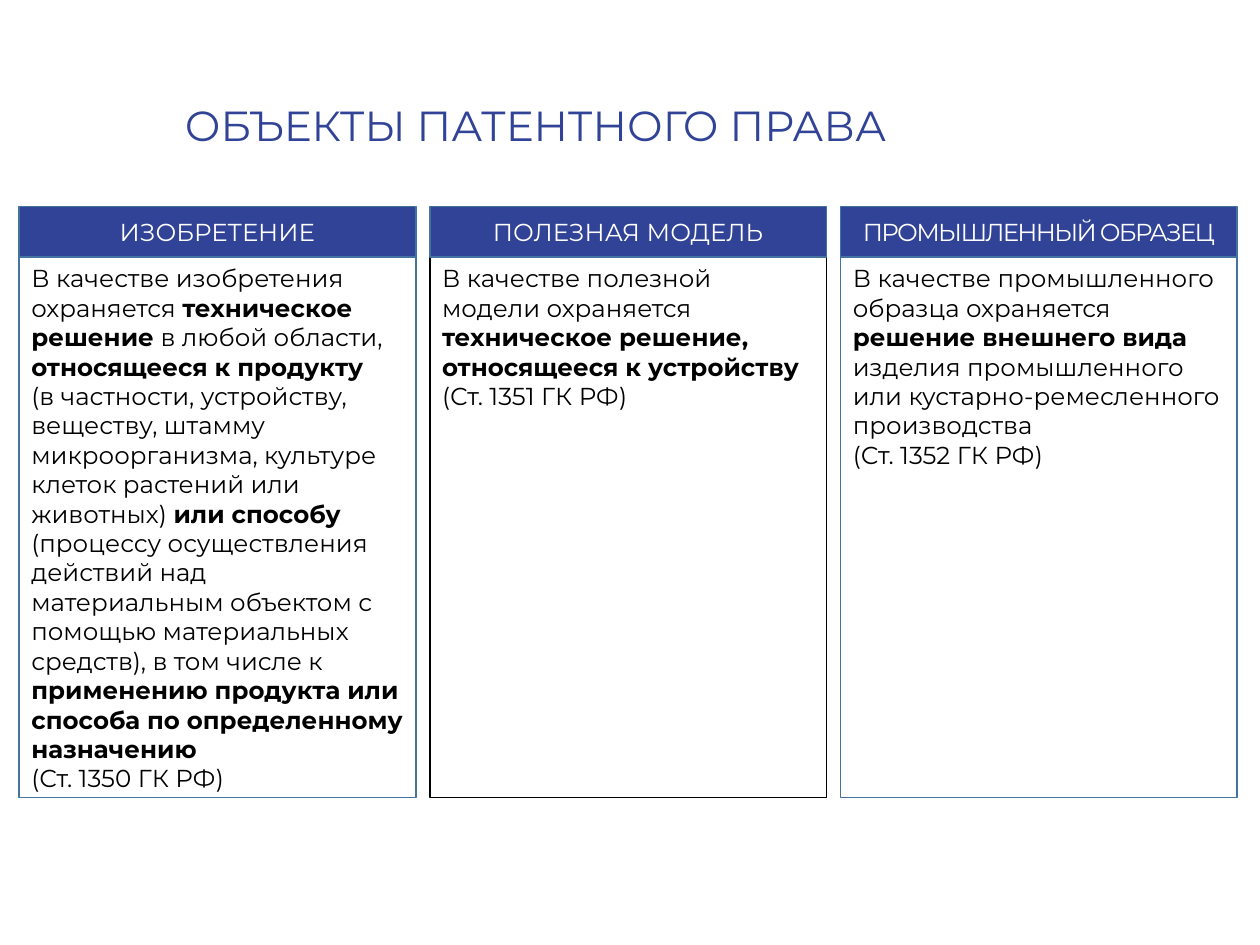
from pptx import Presentation
from pptx.dml.color import RGBColor
from pptx.enum import shapes, text
from pptx.util import Inches, Pt

FONT = "Montserrat"
COLORS = {"blue": "314396", "edge": "43739E", "black": "000000", "white": "FFFFFF"}
TITLE = "ОБЪЕКТЫ ПАТЕНТНОГО ПРАВА"
BREAK = None
COLUMNS = [
    {"head": "ИЗОБРЕТЕНИЕ", "edge": "edge", "spacing": 0, "body": [
        [("В качестве изобретения охраняется ", False),
         ("техническое решение", True),
         (" в любой области, ", False),
         ("относящееся к продукту", True),
         (BREAK, False),
         ("(в частности, устройству, веществу, штамму микроорганизма, "
          "культуре клеток растений или животных) ", False),
         ("или способу ", True),
         ("(процессу осуществления действий над материальным объектом с помощью "
          "материальных средств), в том числе к ", False),
         ("применению продукта или способа по определенному назначению", True)],
        [("(Ст. 1350 ГК РФ)", False)]]},
    {"head": "ПОЛЕЗНАЯ МОДЕЛЬ", "edge": "black", "spacing": 0, "body": [
        [("В качестве полезной модели охраняется ", False),
         ("техническое решение, относящееся к устройству", True)],
        [("(Ст. 1351 ГК РФ)", False)]]},
    {"head": "ПРОМЫШЛЕННЫЙ ОБРАЗЕЦ", "edge": "edge", "spacing": -1, "body": [
        [("В качестве промышленного образца охраняется ", False),
         ("решение внешнего вида ", True),
         ("изделия промышленного или кустарно-ремесленного производства", False)],
        [("(Ст. 1352 ГК РФ)", False)]]},
]
LEFT, TOP, WIDTH, STEP = 0.15, 1.64, 3.15, 3.26
HEAD_H, BODY_H = 0.4, 4.29


def rgb(name):
    return RGBColor.from_string(COLORS[name])


def style(p, size, color, align):
    p.alignment = align
    p.font.name, p.font.size = FONT, Pt(size)
    p.font.color.rgb = rgb(color)


def add_box(s, x, y, h, fill, edge, anchor):
    sp = s.shapes.add_shape(shapes.MSO_SHAPE.RECTANGLE,
                            Inches(x), Inches(y), Inches(WIDTH), Inches(h))
    sp.shadow.inherit = False
    sp.fill.solid()
    sp.fill.fore_color.rgb = rgb(fill)
    sp.line.color.rgb = rgb(edge)
    sp.line.width = Pt(1)
    tf = sp.text_frame
    tf.word_wrap = True
    tf.vertical_anchor = anchor
    return tf


def add_column(s, x, col):
    tf = add_box(s, x, TOP + HEAD_H, BODY_H, "white", col["edge"], text.MSO_ANCHOR.TOP)
    for i, runs in enumerate(col["body"]):
        p = tf.add_paragraph() if i else tf.paragraphs[0]
        style(p, 14, "black", text.PP_ALIGN.LEFT)
        for words, bold in runs:
            if words is BREAK:
                p.add_line_break()
                continue
            r = p.add_run()
            r.text, r.font.bold = words, bold

    tf = add_box(s, x, TOP, HEAD_H, "blue", "edge", text.MSO_ANCHOR.MIDDLE)
    p = tf.paragraphs[0]
    style(p, 14, "white", text.PP_ALIGN.CENTER)
    r = p.add_run()
    r.text = col["head"]
    if col["spacing"]:
        r._r.get_or_add_rPr().set("spc", str(col["spacing"] * 100))


def main():
    prs = Presentation()
    prs.slide_width, prs.slide_height = Inches(10), Inches(7.5)
    s = prs.slides.add_slide(prs.slide_layouts[6])
    tf = s.shapes.add_textbox(Inches(1.37), Inches(0.29),
                              Inches(7.94), Inches(1.45)).text_frame
    tf.word_wrap = True
    tf.vertical_anchor = text.MSO_ANCHOR.MIDDLE
    p = tf.paragraphs[0]
    p.text = TITLE
    p.line_spacing = 0.9
    style(p, 24, "blue", text.PP_ALIGN.LEFT)
    for i, col in enumerate(COLUMNS):
        add_column(s, LEFT + i * STEP, col)
    prs.save("out.pptx")


if __name__ == "__main__":
    main()
